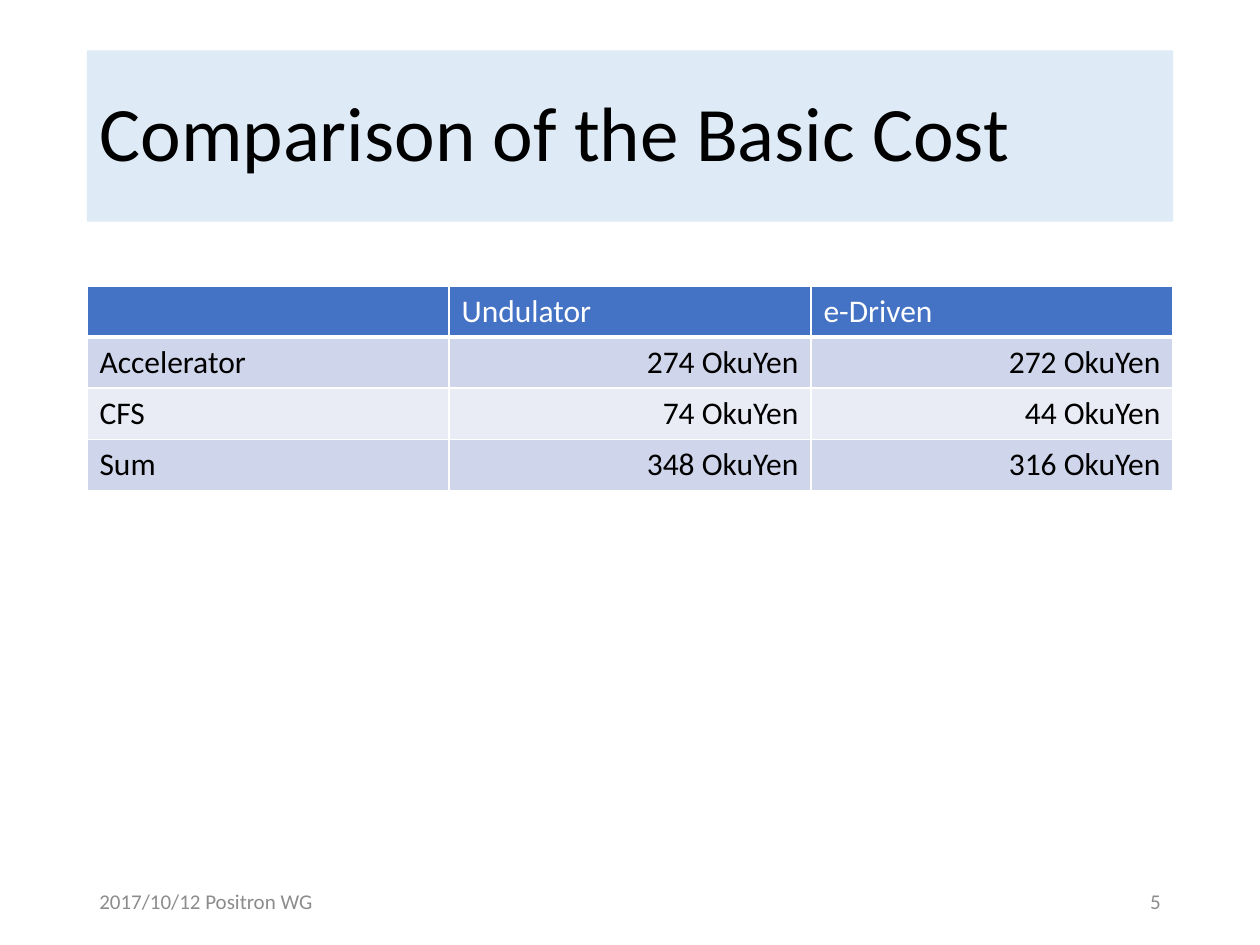
from pptx import Presentation
from pptx.dml.color import RGBColor
from pptx.enum.text import MSO_ANCHOR as Anchor, PP_ALIGN as Align
from pptx.oxml import parse_xml
from pptx.oxml.ns import nsdecls
from pptx.util import Inches, Pt

FONT = "Calibri"
HEADER_FILL = "4472C4"
BAND_FILLS = ("CFD5EA", "E9EBF5")
COST_ROWS = [
    ("", "Undulator", "e-Driven"),
    ("Accelerator", "274 OkuYen", "272 OkuYen"),
    ("CFS", "74 OkuYen", "44 OkuYen"),
    ("Sum", "348 OkuYen", "316 OkuYen"),
]


def color(hex_value):
    """Return the colour for a hex string."""
    return RGBColor.from_string(hex_value)


def write(text_frame, text, size, hex_value, align=Align.LEFT):
    """Write one run into the first paragraph of a text frame."""
    paragraph = text_frame.paragraphs[0]
    paragraph.alignment = align
    run = paragraph.add_run()
    run.text = text
    run.font.name = FONT
    run.font.size = Pt(size)
    run.font.color.rgb = color(hex_value)
    return paragraph


def place_title(slide, left, top, width, height):
    """Place the title placeholder on its pale blue band."""
    title = slide.shapes.title
    title.left, title.top, title.width, title.height = map(
        Inches, (left, top, width, height))
    title.fill.solid()
    title.fill.fore_color.rgb = color("DEEBF7")
    title.text_frame.vertical_anchor = Anchor.MIDDLE
    paragraph = write(title.text_frame, "Comparison of the Basic Cost", 44, "000000")
    paragraph.line_spacing = 0.9


def style_cell(cell, fill, bottom_width):
    """Give a cell white borders and a solid fill."""
    properties = cell._tc.get_or_add_tcPr()
    for side, width in (("L", 1), ("R", 1), ("T", 1), ("B", bottom_width)):
        properties.append(parse_xml(
            f'<a:ln{side} {nsdecls("a")} w="{Pt(width)}"><a:solidFill>'
            f'<a:srgbClr val="FFFFFF"/></a:solidFill></a:ln{side}>'))
    cell.fill.solid()
    cell.fill.fore_color.rgb = color(fill)


def add_cost_table(slide, left, top, width, height):
    """Add the cost table with a header row and banded rows."""
    frame = slide.shapes.add_table(
        len(COST_ROWS), len(COST_ROWS[0]),
        Inches(left), Inches(top), Inches(width), Inches(height))
    for row_index, row in enumerate(COST_ROWS):
        is_header = row_index == 0
        fill = HEADER_FILL if is_header else BAND_FILLS[(row_index - 1) % 2]
        for column_index, text in enumerate(row):
            cell = frame.table.cell(row_index, column_index)
            style_cell(cell, fill, 3 if is_header else 1)
            if text:
                is_value = not is_header and column_index > 0
                write(cell.text_frame, text, 18,
                      "FFFFFF" if is_header else "000000",
                      Align.RIGHT if is_value else Align.LEFT)


def add_footer(slide, left, top, width, height):
    """Add the date at the left and the page number at the right."""
    box_width = 2.25
    for text, box_left, align in (
        ("2017/10/12 Positron WG", left, Align.LEFT),
        ("5", left + width - box_width, Align.RIGHT),
    ):
        box = slide.shapes.add_textbox(
            Inches(box_left), Inches(top), Inches(box_width), Inches(height))
        box.text_frame.word_wrap = True
        box.text_frame.vertical_anchor = Anchor.MIDDLE
        write(box.text_frame, text, 12, "8C8C8C", align)


def main():
    """Build and save the slide."""
    presentation = Presentation()
    presentation.slide_width = Inches(10)
    presentation.slide_height = Inches(7.5)
    slide = presentation.slides.add_slide(presentation.slide_layouts[5])
    left, width = 0.69, 8.62
    place_title(slide, left, 0.4, width, 1.36)
    add_cost_table(slide, left, 2.27, width, 1.62)
    add_footer(slide, left, 6.95, width, 0.4)
    presentation.save("out.pptx")


if __name__ == "__main__":
    main()
